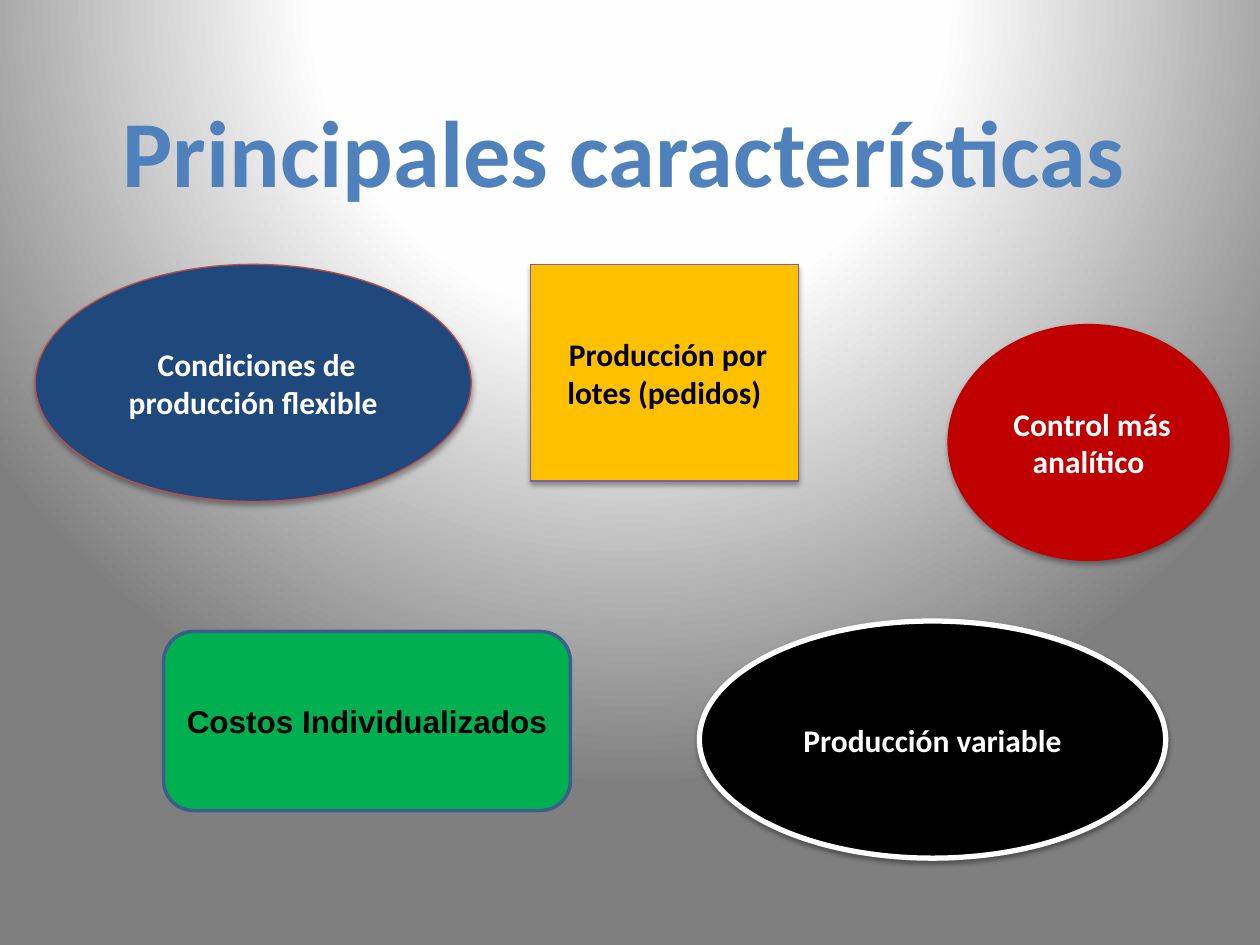
import pptx
import pptx.dml.color
import pptx.enum.shapes
import pptx.enum.text
import pptx.oxml
import pptx.oxml.ns
import pptx.util

Cm, Pt = pptx.util.Cm, pptx.util.Pt
SHAPE = pptx.enum.shapes.MSO_SHAPE
CENTER = pptx.enum.text.PP_ALIGN.CENTER
MIDDLE = pptx.enum.text.MSO_ANCHOR.MIDDLE
NS = pptx.oxml.ns.nsdecls("a")

TITLE = "Principales características"
BACKGROUND = [(0, "FFFFFF"), (40, "FEFEFE"), (100, "7F7F7F")]
SOFT, STRONG = (35, 1.8), (38, 1.6)
FEATURES = [
    dict(text=" Producción por lotes (pedidos)", kind=SHAPE.RECTANGLE,
         box=(10.69, 5.33, 5.41, 4.37), fill="FFC000", line=("7D60A0", 0.75),
         color="000000", font="Calibri", shadow=SOFT),
    dict(text="Producción variable", kind=SHAPE.OVAL,
         box=(14.1, 12.52, 9.4, 4.78), fill="000000", line=("FFFFFF", 3),
         color="FFFFFF", font="Calibri", shadow=STRONG),
    dict(text=" Condiciones de producción flexible", kind=SHAPE.OVAL,
         box=(0.71, 5.33, 8.79, 4.78), fill="1F497D", line=("BF4C48", 0.75),
         color="FFFFFF", font="Calibri", shadow=SOFT),
    dict(text=" Control más analítico", kind=SHAPE.OVAL,
         box=(19.1, 6.53, 5.69, 4.78), fill="C00000", line=None,
         color="FFFFFF", font="Calibri", shadow=SOFT),
    dict(text="Costos Individualizados", kind=SHAPE.ROUNDED_RECTANGLE,
         box=(3.3, 12.73, 8.2, 3.61), fill="00B050", line=("3A5F8C", 2),
         color="000000", font="Arial", shadow=None),
]


def rgb(value):
    return pptx.dml.color.RGBColor.from_string(value)


def write(sp, text, font, size, color):
    tf = sp.text_frame
    tf.vertical_anchor = MIDDLE
    p = tf.paragraphs[0]
    p.text = text
    p.alignment = CENTER
    p.font.name = font
    p.font.size = Pt(size)
    p.font.bold = True
    p.font.color.rgb = rgb(color)
    return tf


def paint_background(slide):
    fill = slide.background.fill
    fill.gradient()
    stops = "".join(
        f'<a:gs pos="{pos * 1000}"><a:srgbClr val="{color}"/></a:gs>'
        for pos, color in BACKGROUND)
    new = pptx.oxml.parse_xml(
        f'<a:gradFill {NS} rotWithShape="1"><a:gsLst>{stops}</a:gsLst>'
        '<a:path path="circle"><a:fillToRect l="50000" t="-80000" '
        'r="50000" b="180000"/></a:path></a:gradFill>')
    old = slide.element.find(".//" + pptx.oxml.ns.qn("a:gradFill"))
    old.getparent().replace(old, new)


def add_shadow(sp, alpha, distance):
    effects = sp.element.spPr.find(pptx.oxml.ns.qn("a:effectLst"))
    effects.append(pptx.oxml.parse_xml(
        f'<a:outerShdw {NS} blurRad="{Pt(3.1)}" dist="{Pt(distance)}" '
        'dir="5400000" rotWithShape="0"><a:srgbClr val="000000">'
        f'<a:alpha val="{alpha * 1000}"/></a:srgbClr></a:outerShdw>'))


def add_feature(slide, feature):
    sp = slide.shapes.add_shape(feature["kind"], *map(Cm, feature["box"]))
    sp.fill.solid()
    sp.fill.fore_color.rgb = rgb(feature["fill"])
    if feature["line"]:
        color, width = feature["line"]
        sp.line.color.rgb = rgb(color)
        sp.line.width = Pt(width)
    else:
        sp.line.fill.background()
    sp.shadow.inherit = False
    if feature["shadow"]:
        add_shadow(sp, *feature["shadow"])
    write(sp, feature["text"], feature["font"], 18, feature["color"])


def main():
    prs = pptx.Presentation()
    prs.slide_width, prs.slide_height = Cm(25.4), Cm(19.05)
    slide = prs.slides.add_slide(prs.slide_layouts[5])
    paint_background(slide)
    title = slide.shapes.title
    title.left, title.top, title.width, title.height = map(
        Cm, (2.11, 1.73, 20.93, 2.57))
    tf = write(title, TITLE, "Calibri", 54, "4F81BD")
    tf.word_wrap = False
    for feature in FEATURES:
        add_feature(slide, feature)
    prs.save("out.pptx")


if __name__ == "__main__":
    main()
